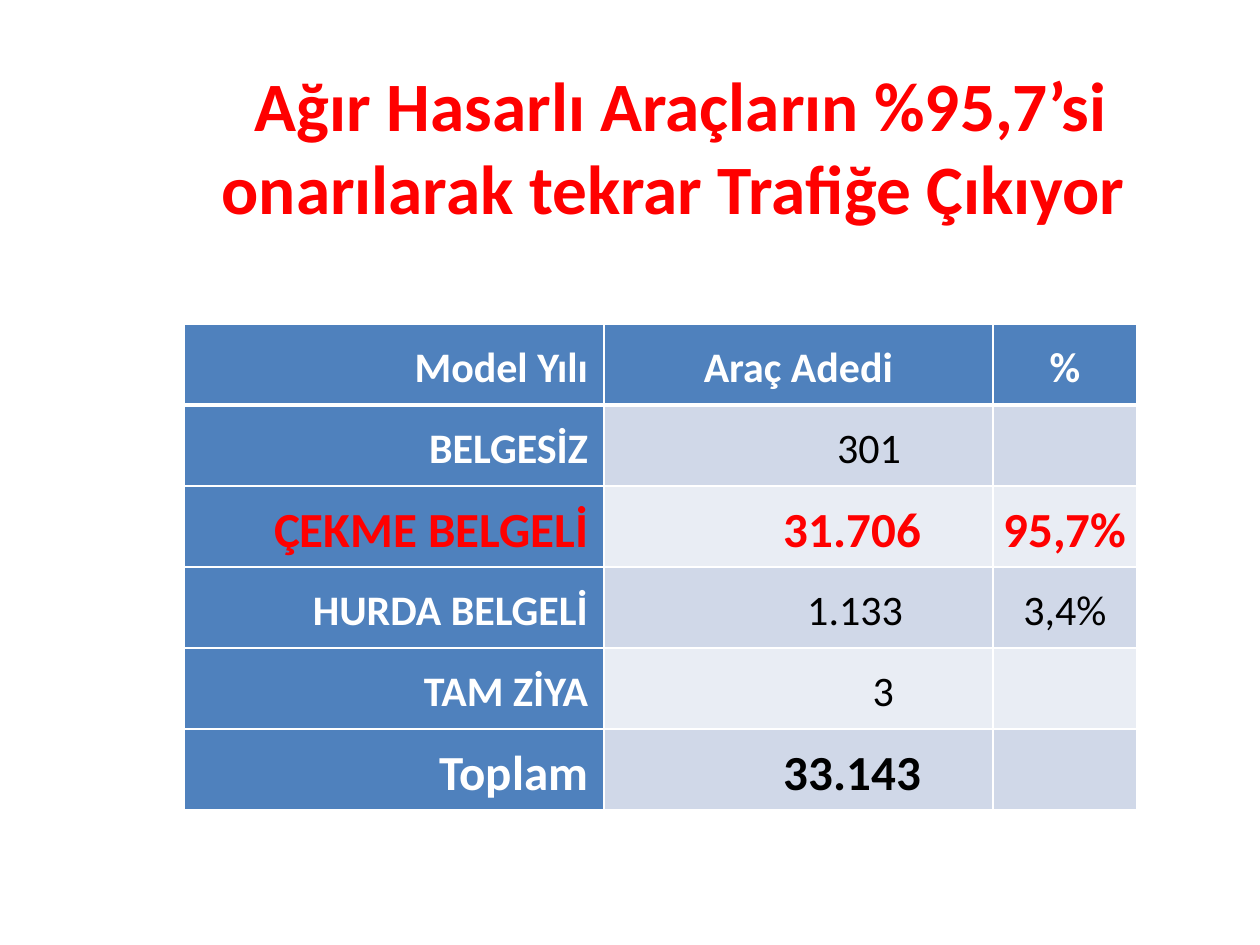
from lxml import etree
from pptx import Presentation
from pptx.dml.color import RGBColor
from pptx.enum.text import MSO_ANCHOR, PP_ALIGN
from pptx.oxml.ns import qn
from pptx.util import Pt

SCALE = 914400 / 126
FONT = "Calibri"
MID = MSO_ANCHOR.MIDDLE
LEFT, CENTER, RIGHT = PP_ALIGN.LEFT, PP_ALIGN.CENTER, PP_ALIGN.RIGHT
COLORS = {"red": "FF0000", "white": "FFFFFF", "black": "000000",
          "blue": "4F81BD", "dark": "D0D8E8", "light": "E9EDF4"}

HEADS = ["Model Yılı", "Araç Adedi", "%"]
# label, count, share, right margin of the count in px
ROWS = [
    ("BELGESİZ", "301", "", 92),
    ("ÇEKME BELGELİ", "31.706", "95,7%", 72),
    ("HURDA BELGELİ", "1.133", "3,4%", 90),
    ("TAM ZİYA", "3", "", 99),
    ("Toplam", "33.143", "", 72),
]
COLS = [420, 389, 144]
PAD = 6
LABEL_PAD = 16


def px(n):
    return round(n * SCALE)


def color(name):
    return RGBColor.from_string(COLORS[name])


def write(para, text, size, ink, bold, align):
    para.alignment = align
    run = para.add_run()
    run.text = text
    font = run.font
    font.name, font.size, font.bold = FONT, Pt(size), bold
    font.color.rgb = color(ink)


def add_title(slide, left, top, width, height):
    title = slide.shapes.title
    title.left, title.top = px(left), px(top)
    title.width, title.height = px(width), px(height)
    frame = title.text_frame
    frame.word_wrap = True
    frame.vertical_anchor = MID
    write(frame.paragraphs[0],
          " Ağır Hasarlı Araçların %95,7’si onarılarak tekrar Trafiğe Çıkıyor",
          39.6, "red", True, CENTER)


def set_edges(cell, row):
    """Draw white cell borders, with a thick rule under the header."""
    props = cell._tc.get_or_add_tcPr()
    for side in "LRTB":
        thick = (row, side) in ((0, "B"), (1, "T"))
        line = etree.SubElement(props, qn("a:ln" + side),
                                w=str(Pt(3 if thick else 1)))
        fill = etree.SubElement(line, qn("a:solidFill"))
        etree.SubElement(fill, qn("a:srgbClr"), val=COLORS["white"])


def fill_cell(cell, row, text, back, size, ink, bold, align, pad=PAD):
    set_edges(cell, row)
    cell.fill.solid()
    cell.fill.fore_color.rgb = color(back)
    cell.vertical_anchor = MID
    cell.margin_left, cell.margin_right = px(PAD), px(pad)
    cell.margin_top = cell.margin_bottom = 0
    if text:
        para = cell.text_frame.paragraphs[0]
        para.line_spacing = 1.15
        write(para, text, size, ink, bold, align)


def add_table(slide, left, top, high):
    """Place the table with rows of the given height."""
    count = len(ROWS) + 1
    table = slide.shapes.add_table(
        count, len(COLS), px(left), px(top),
        px(sum(COLS)), px(high * count)).table
    for col, wide in zip(table.columns, COLS):
        col.width = px(wide)
    for row in table.rows:
        row.height = px(high)

    for c, head in enumerate(HEADS):
        fill_cell(table.cell(0, c), 0, head, "blue", 24, "white", True,
                  CENTER if c else RIGHT, PAD if c else LABEL_PAD)

    for r, (label, number, share, gap) in enumerate(ROWS, 1):
        key = label == "ÇEKME BELGELİ"
        big = key or label == "Toplam"
        size = 28 if big else 24
        back = "dark" if r % 2 else "light"
        ink = "red" if key else "black"
        fill_cell(table.cell(r, 0), r, label, "blue", size,
                  "red" if key else "white", True, RIGHT, LABEL_PAD)
        fill_cell(table.cell(r, 1), r, number, back, size, ink, big,
                  RIGHT, gap)
        fill_cell(table.cell(r, 2), r, share, back, size, ink, big, CENTER)


def main():
    deck = Presentation()
    deck.slide_width, deck.slide_height = px(1260), px(945)
    slide = deck.slides.add_slide(deck.slide_layouts[5])
    add_title(slide, 113, 66, 1121, 158)
    add_table(slide, 184, 324, 81)
    deck.save("out.pptx")


if __name__ == "__main__":
    main()
